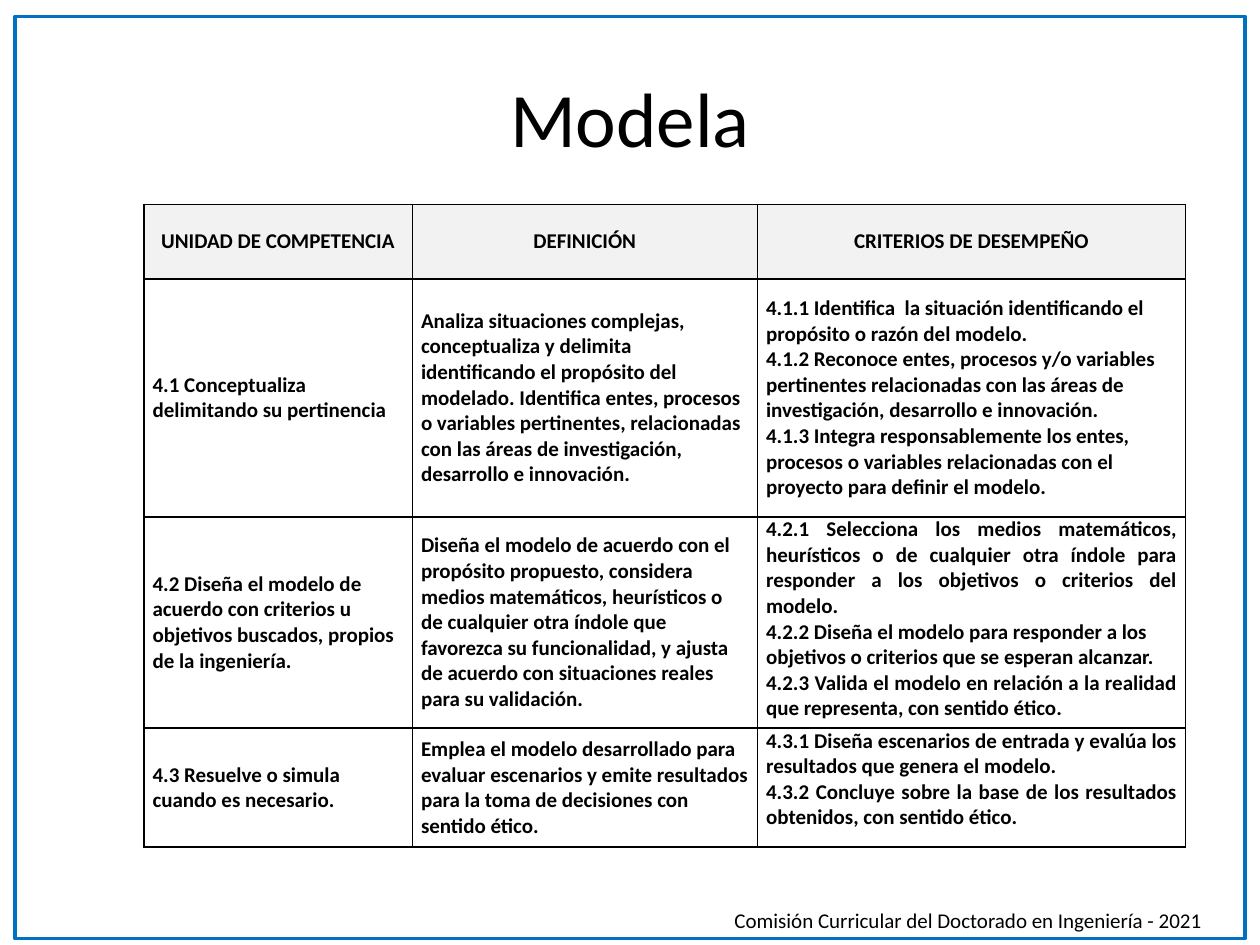
from dataclasses import dataclass

from lxml import etree
from pptx import Presentation
from pptx.dml.color import RGBColor
from pptx.enum.shapes import MSO_SHAPE
from pptx.enum.text import MSO_ANCHOR, MSO_AUTO_SIZE, PP_ALIGN
from pptx.oxml.ns import qn
from pptx.util import Pt

RECTANGLE = MSO_SHAPE.RECTANGLE
TOP, MIDDLE = MSO_ANCHOR.TOP, MSO_ANCHOR.MIDDLE
LEFT, CENTER, JUSTIFY = PP_ALIGN.LEFT, PP_ALIGN.CENTER, PP_ALIGN.JUSTIFY
FIT_SHAPE = MSO_AUTO_SIZE.SHAPE_TO_FIT_TEXT
TITLE_ONLY = 5


@dataclass(frozen=True)
class Theme:
    font: str = "Calibri"
    ink: RGBColor = RGBColor(0, 0, 0)
    paper: RGBColor = RGBColor(255, 255, 255)
    header: RGBColor = RGBColor(0xF2, 0xF2, 0xF2)
    frame: RGBColor = RGBColor(0, 0x70, 0xC0)
    title_size: int = 44
    body_size: int = 12
    frame_width: int = 2
    rule_width: int = 1
    cell_inset: int = 5


@dataclass(frozen=True)
class Box:
    left: float
    top: float
    width: float
    height: float

    def lengths(self):
        return Pt(self.left), Pt(self.top), Pt(self.width), Pt(self.height)


THEME = Theme()
COLUMN_WIDTHS = [153.4, 197.2, 244.8]
ROW_HEIGHTS = [42.6, 136, 120.8, 68]
HEADERS = ["UNIDAD DE COMPETENCIA", "DEFINICIÓN", "CRITERIOS DE DESEMPEÑO"]
UNITS = [
    (
        "4.1 Conceptualiza delimitando su pertinencia",
        "Analiza situaciones complejas, conceptualiza y delimita identificando el propósito "
        "del modelado. Identifica entes, procesos o variables pertinentes, relacionadas con "
        "las áreas de investigación, desarrollo e innovación.",
        MIDDLE,
        [
            (LEFT, "4.1.1 Identifica  la situación identificando el propósito o razón del modelo."),
            (LEFT, "4.1.2 Reconoce entes, procesos y/o variables pertinentes relacionadas con "
                   "las áreas de investigación, desarrollo e innovación."),
            (LEFT, "4.1.3 Integra responsablemente los entes, procesos o variables relacionadas "
                   "con el proyecto para definir el modelo."),
        ],
    ),
    (
        "4.2 Diseña el modelo de acuerdo con criterios u objetivos buscados, propios de la "
        "ingeniería.",
        "Diseña el modelo de acuerdo con el propósito propuesto, considera medios matemáticos, "
        "heurísticos o de cualquier otra índole que favorezca su funcionalidad, y ajusta de "
        "acuerdo con situaciones reales para su validación.",
        TOP,
        [
            (JUSTIFY, "4.2.1 Selecciona los medios matemáticos, heurísticos o de cualquier otra "
                      "índole para responder a los objetivos o criterios del modelo."),
            (LEFT, "4.2.2 Diseña el modelo para responder a los objetivos o criterios que se "
                   "esperan alcanzar."),
            (JUSTIFY, "4.2.3 Valida el modelo en relación a la realidad que representa, con "
                      "sentido ético."),
        ],
    ),
    (
        "4.3 Resuelve o simula cuando es necesario.",
        "Emplea el modelo desarrollado para evaluar escenarios y emite resultados para la toma "
        "de decisiones con sentido ético.",
        TOP,
        [
            (JUSTIFY, "4.3.1 Diseña escenarios de entrada y evalúa los resultados que genera el "
                      "modelo."),
            (JUSTIFY, "4.3.2 Concluye sobre la base de los resultados obtenidos, con sentido "
                      "ético."),
        ],
    ),
]


def write_paragraphs(text_frame, paragraphs, size, bold=False):
    for index, (alignment, text) in enumerate(paragraphs):
        para = text_frame.add_paragraph() if index else text_frame.paragraphs[0]
        para.alignment = alignment
        span = para.add_run()
        span.text = text
        span.font.name = THEME.font
        span.font.size = Pt(size)
        span.font.bold = bold
        span.font.color.rgb = THEME.ink


def draw_borders(cell):
    properties = cell._tc.get_or_add_tcPr()
    for position, side in enumerate(("a:lnL", "a:lnR", "a:lnT", "a:lnB")):
        line = etree.Element(qn(side), w=str(Pt(THEME.rule_width)))
        fill = etree.SubElement(line, qn("a:solidFill"))
        etree.SubElement(fill, qn("a:srgbClr"), val=str(THEME.ink))
        properties.insert(position, line)


def fill_cell(cell, paragraphs, color, anchor=MIDDLE):
    cell.margin_left = cell.margin_right = Pt(THEME.cell_inset)
    cell.margin_top = cell.margin_bottom = 0
    cell.vertical_anchor = anchor
    cell.fill.solid()
    cell.fill.fore_color.rgb = color
    write_paragraphs(cell.text_frame, paragraphs, THEME.body_size, bold=True)
    draw_borders(cell)


def place_title(page, box, text):
    title = page.shapes.title
    title.left, title.top, title.width, title.height = box.lengths()
    title.text_frame.vertical_anchor = MIDDLE
    write_paragraphs(title.text_frame, [(CENTER, text)], THEME.title_size)


def add_frame(page, box):
    frame = page.shapes.add_shape(RECTANGLE, *box.lengths())
    frame.shadow.inherit = False
    frame.fill.background()
    frame.line.color.rgb = THEME.frame
    frame.line.width = Pt(THEME.frame_width)


def add_competence_table(page, box):
    rows, columns = len(ROW_HEIGHTS), len(COLUMN_WIDTHS)
    table = page.shapes.add_table(rows, columns, *box.lengths()).table
    table.horz_banding = False
    for column, width in zip(table.columns, COLUMN_WIDTHS):
        column.width = Pt(width)
    for row, height in zip(table.rows, ROW_HEIGHTS):
        row.height = Pt(height)
    for column, header in enumerate(HEADERS):
        fill_cell(table.cell(0, column), [(CENTER, header)], THEME.header)
    for row, (unit, definition, anchor, criteria) in enumerate(UNITS, start=1):
        fill_cell(table.cell(row, 0), [(LEFT, unit)], THEME.paper)
        fill_cell(table.cell(row, 1), [(LEFT, definition)], THEME.paper)
        fill_cell(table.cell(row, 2), criteria, THEME.paper, anchor)


def add_credit(page, box, text):
    credit = page.shapes.add_textbox(*box.lengths()).text_frame
    credit.word_wrap = False
    credit.auto_size = FIT_SHAPE
    write_paragraphs(credit, [(CENTER, text)], THEME.body_size)


def main():
    deck = Presentation()
    deck.slide_width, deck.slide_height = Pt(720), Pt(540)
    page = deck.slides.add_slide(deck.slide_layouts[TITLE_ONLY])
    place_title(page, Box(36, 21.6, 648, 90), "Modela")
    add_frame(page, Box(8.6, 9.4, 702.8, 527))
    add_competence_table(page, Box(82.2, 116.8, sum(COLUMN_WIDTHS), sum(ROW_HEIGHTS)))
    add_credit(page, Box(408.2, 514.8, 290.2, 21.6),
               "Comisión Curricular del Doctorado en Ingeniería - 2021")
    deck.save("out.pptx")


if __name__ == "__main__":
    main()
